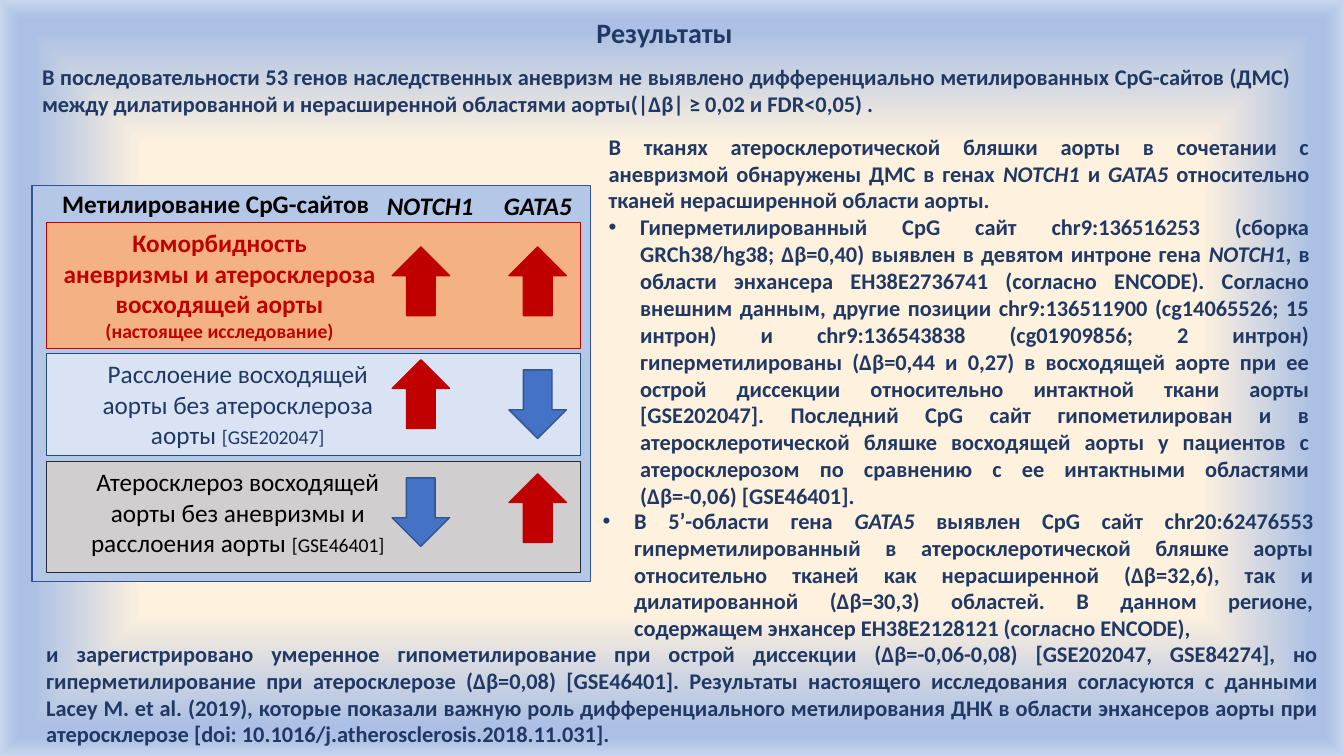
from lxml.etree import SubElement
from pptx import Presentation
from pptx.dml.color import RGBColor
from pptx.enum.shapes import MSO_SHAPE as Preset
from pptx.enum.text import MSO_AUTO_SIZE as AutoSize, PP_ALIGN as Align
from pptx.oxml import parse_xml
from pptx.oxml.ns import nsdecls, qn
from pptx.util import Pt

NAVY = RGBColor(0x20, 0x38, 0x64)
RED = RGBColor(0xC0, 0x00, 0x00)
BLACK = RGBColor(0x00, 0x00, 0x00)
BLUE = RGBColor(0x44, 0x72, 0xC4)
BLUE_EDGE = RGBColor(0x32, 0x54, 0x91)
PANEL = RGBColor(0xB4, 0xC7, 0xE7)
ORANGE = RGBColor(0xF4, 0xB1, 0x83)
PALE_BLUE = RGBColor(0xDA, 0xE3, 0xF3)
DEEP_BLUE = RGBColor(0x1F, 0x4E, 0x79)
GREY = RGBColor(0xD0, 0xCE, 0xCE)
CHARCOAL = RGBColor(0x22, 0x2A, 0x35)
CREAM = RGBColor(0xFE, 0xF1, 0xDE)
SKY = RGBColor(0xAB, 0xC0, 0xE4)
MIST = RGBColor(0xC7, 0xD5, 0xED)

BODY = {"size": Pt(16), "bold": True}
LABEL = {"size": Pt(18), "bold": False}
STRONG = {"size": Pt(18), "bold": True}
GENE = {"italic": True}
SMALL = {"size": Pt(14)}


class SlideBuilder:
    """Holds the font and the current slide; lengths are in points."""

    def __init__(self, slide, font_name):
        self.slide = slide
        self.font_name = font_name

    def background(self, stops):
        self.slide.background.fill.gradient()
        old = self.slide.element.find(".//" + qn("a:gradFill"))
        marks = "".join(
            f'<a:gs pos="{percent * 1000}"><a:srgbClr val="{color}"/></a:gs>'
            for percent, color in stops)
        old.getparent().replace(old, parse_xml(
            f'<a:gradFill {nsdecls("a")} rotWithShape="1"><a:gsLst>{marks}</a:gsLst>'
            '<a:path path="shape"><a:fillToRect l="50000" t="50000" r="50000" b="50000"/>'
            '</a:path></a:gradFill>'))

    def shape(self, preset, box, fill, edge, rotation=0):
        shape = self.slide.shapes.add_shape(preset, *map(Pt, box))
        shape.shadow.inherit = False
        shape.fill.solid()
        shape.fill.fore_color.rgb = fill
        shape.line.color.rgb = edge
        shape.line.width = Pt(1)
        shape.rotation = rotation

    def bullet(self, paragraph):
        properties = paragraph._p.get_or_add_pPr()
        properties.set("marL", str(Pt(22.5)))
        properties.set("indent", str(-Pt(22.5)))
        SubElement(properties, qn("a:buFont"), typeface="Arial")
        SubElement(properties, qn("a:buChar"), char="•")

    def text(self, box, paragraphs, style=BODY, accent=GENE, color=NAVY,
             align=Align.JUSTIFY, wrap=True):
        """Text between asterisks takes the accent; a leading bullet makes a list item."""
        frame = self.slide.shapes.add_textbox(*map(Pt, box)).text_frame
        frame.word_wrap = wrap
        frame.auto_size = AutoSize.SHAPE_TO_FIT_TEXT
        for index, content in enumerate(paragraphs):
            paragraph = frame.add_paragraph() if index else frame.paragraphs[0]
            paragraph.alignment = align
            if content.startswith("•"):
                self.bullet(paragraph)
                content = content[1:]
            for part, words in enumerate(content.split("*")):
                if not words:
                    continue
                run = paragraph.add_run()
                run.text = words
                values = {"name": self.font_name, **style, **(accent if part % 2 else {})}
                for name, value in values.items():
                    setattr(run.font, name, value)
                run.font.color.rgb = color


def main():
    presentation = Presentation()
    presentation.slide_width, presentation.slide_height = Pt(960), Pt(540)
    slide = presentation.slides.add_slide(presentation.slide_layouts[6])
    builder = SlideBuilder(slide, "Calibri")
    builder.background([(62, CREAM), (92, SKY), (95, SKY), (100, MIST)])

    # Findings on the right
    builder.text((427.7, 91.4, 514.8, 278.6), [
        "В тканях атеросклеротической бляшки аорты в сочетании с аневризмой обнаружены "
        "ДМС в генах *NOTCH1* и *GATA5* относительно тканей нерасширенной области аорты.",
        "•Гиперметилированный CpG сайт chr9:136516253 (сборка GRCh38/hg38; Δβ=0,40) "
        "выявлен в девятом интроне гена *NOTCH1*, в области энхансера EH38E2736741 "
        "(согласно ENCODE). Согласно внешним данным, другие позиции chr9:136511900 "
        "(cg14065526; 15 интрон) и chr9:136543838 (cg01909856; 2 интрон) "
        "гиперметилированы (Δβ=0,44 и 0,27) в восходящей аорте при ее острой диссекции "
        "относительно интактной ткани аорты [GSE202047]. Последний CpG сайт "
        "гипометилирован и в атеросклеротической бляшке восходящей аорты у пациентов с "
        "атеросклерозом по сравнению с ее интактными областями (Δβ=-0,06) [GSE46401]."])

    # Title and lead
    builder.text((419, 7.2, 112.3, 31.5), ["Результаты"],
                 {"size": Pt(20), "bold": True}, align=Align.LEFT, wrap=False)
    builder.text((23, 41.8, 906.5, 46), [
        "В последовательности 53 генов наследственных аневризм не выявлено "
        "дифференциально метилированных CpG-сайтов (ДМС) между дилатированной и "
        "нерасширенной областями аорты(|Δβ| ≥ 0,02 и FDR<0,05) ."])

    # Closing text across the bottom
    builder.text((25.9, 453.6, 923, 85), [
        "и зарегистрировано умеренное гипометилирование при острой диссекции "
        "(Δβ=-0,06-0,08) [GSE202047, GSE84274], но гиперметилирование при атеросклерозе "
        "(Δβ=0,08) [GSE46401]. Результаты настоящего исследования согласуются с данными "
        "Lacey M. et al. (2019), которые показали важную роль дифференциального "
        "метилирования ДНК в области энхансеров аорты при атеросклерозе "
        "[doi: 10.1016/j.atherosclerosis.2018.11.031]."])

    # Methylation panel: frame and headings
    builder.shape(Preset.RECTANGLE, (23, 132.5, 398.9, 283), PANEL, BLUE_EDGE)
    builder.text((37.4, 131, 234.7, 29), ["Метилирование CpG-сайтов"],
                 STRONG, color=BLACK, align=Align.LEFT)
    arrow_columns = {"NOTCH1": 280.1, "GATA5": 363.6}
    for gene, left in arrow_columns.items():
        builder.text((left - 10.8, 132.5, 80, 29), [f"*{gene}*"],
                     STRONG, color=BLACK, align=Align.LEFT)

    # Panel rows: top, height, fill, edge, label box, label, style, colour, arrows
    rows = [
        (159.1, 90, ORANGE, RED, (37.4, 239), [
            "Коморбидность", "аневризмы и атеросклероза восходящей аорты",
            "*(настоящее исследование)*"], STRONG, RED, [(176.4, True), (176.4, True)]),
        (252.7, 72.7, PALE_BLUE, DEEP_BLUE, (51.8, 236.2), [
            "Расслоение восходящей аорты без атеросклероза аорты *[GSE202047]*"],
         LABEL, NAVY, [(257, True), (264.2, False)]),
        (329.8, 79.2, GREY, CHARCOAL, (26.6, 286.6), [
            "Атеросклероз восходящей", "аорты без аневризмы и расслоения аорты *[GSE46401]*"],
         LABEL, BLACK, [(341.3, False), (338.4, True)]),
    ]
    for top, height, fill, edge, (left, width), label, style, color, arrows in rows:
        builder.shape(Preset.RECTANGLE, (33.1, top, 381.6, height), fill, edge)
        builder.text((left, top, width, min(height, 73)) if len(label) < 3
                     else (left, top, width, height),
                     label, style, SMALL, color, Align.CENTER)
        for column, (arrow_top, rising) in zip(arrow_columns.values(), arrows):
            builder.shape(Preset.DOWN_ARROW, (column, arrow_top, 41, 49),
                          RED if rising else BLUE, RED if rising else BLUE_EDGE,
                          180 if rising else 0)

    # GATA5 finding
    builder.text((423.4, 358.6, 522, 104.4), [
        "•В 5’-области гена *GATA5* выявлен CpG сайт chr20:62476553 гиперметилированный "
        "в атеросклеротической бляшке аорты относительно тканей как нерасширенной "
        "(Δβ=32,6), так и дилатированной (Δβ=30,3) областей. В данном регионе, "
        "содержащем энхансер EH38E2128121 (согласно ENCODE),"])

    presentation.save("out.pptx")


if __name__ == "__main__":
    main()
